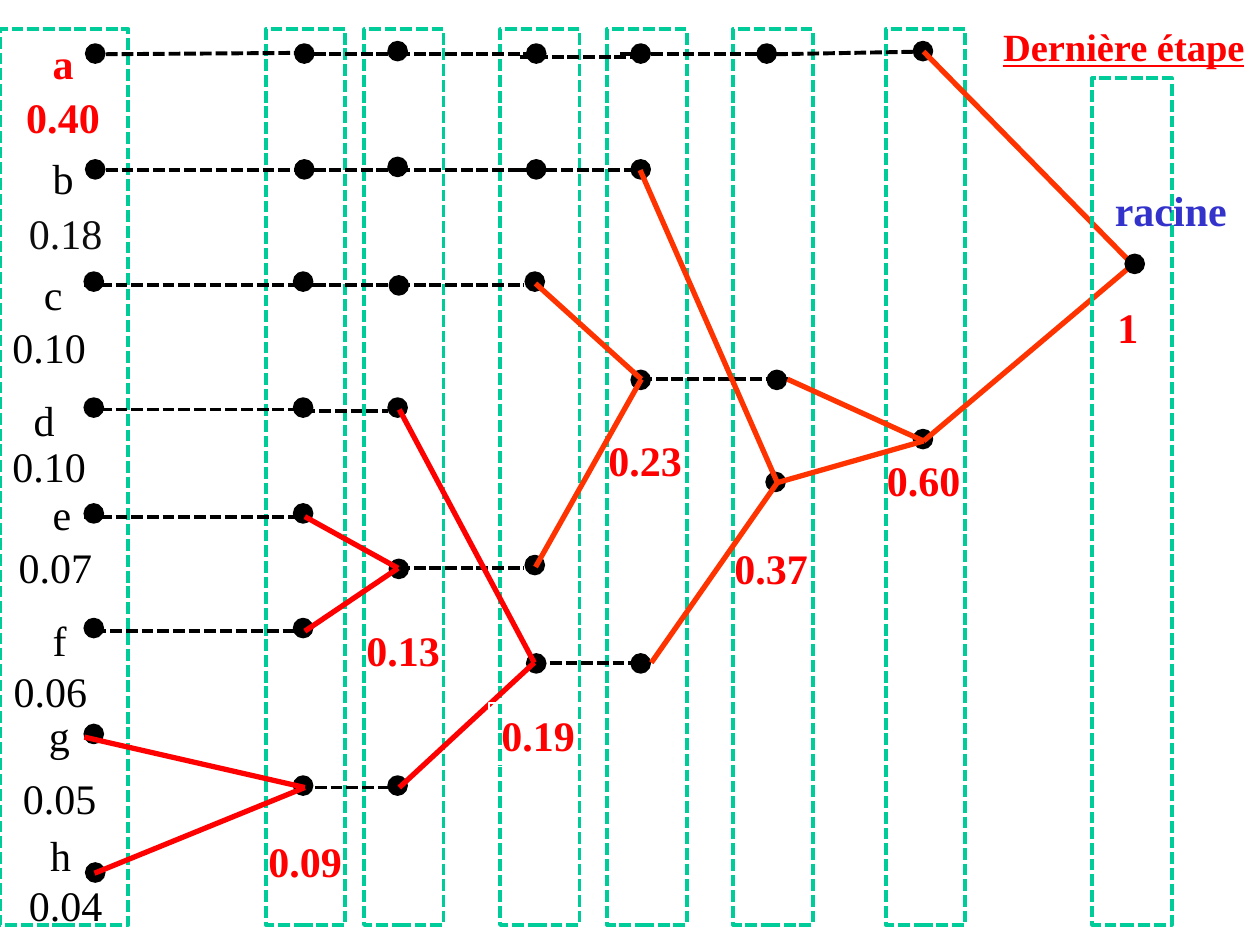
import dataclasses

import pptx
import pptx.dml.color
import pptx.enum.dml
import pptx.enum.shapes
import pptx.enum.text
import pptx.oxml
import pptx.util

Pt = pptx.util.Pt
MSO_SHAPE = pptx.enum.shapes.MSO_SHAPE
DASH = pptx.enum.dml.MSO_LINE.SQUARE_DOT


@dataclasses.dataclass(frozen=True)
class Theme:
    font: str = "Times New Roman"
    title_size: float = 22
    text_size: float = 24
    black: str = "000000"
    soft_black: str = "0D0D0D"
    red: str = "FF0000"
    orange: str = "FF3300"
    green: str = "00CC99"
    blue: str = "3333CC"
    white: str = "FFFFFF"


@dataclasses.dataclass(frozen=True)
class Box:
    left: float
    top: float
    width: float
    height: float

    def inner(self, left, top, width, height):
        """Return a box whose corner is measured from this one."""
        return Box(self.left + left, self.top + top, width, height)

    def lengths(self):
        return [Pt(value) for value in dataclasses.astuple(self)]


THEME = Theme()
PAGE = Box(0, 0, 720, 540)
STEP_TOP, STEP_WIDTH, STEP_HEIGHT = 16.6, 45.4, 512
LEAF_STEP = Box(0, STEP_TOP, 73.4, STEP_HEIGHT)
ROOT_STEP = Box(624.2, 44.6, STEP_WIDTH, 483.8)
DOT = 10.8
LABEL_HEIGHT, WEIGHT_WIDTH = 36.4, 56.6

# Dot centres, measured from the corner of their step
LEAF_DOTS = [(54.4, 14), (54.4, 80.2), (53.6, 144.3), (53.6, 216.3),
             (53.6, 276.8), (53.6, 342.3), (53.6, 402.8), (54.4, 482)]
ROOT_DOTS = [(24.2, 106.2)]
MIDDLE_STEPS = {  # left edge of the step: its dots
    151.9: [(22, 14), (22, 80.2), (21.3, 144.3), (21.3, 216.3),
            (21.3, 276.8), (21.3, 342.3), (21.3, 432.3)],
    208.1: [(19.1, 12.6), (19.1, 78.8), (19.8, 146.5), (19.1, 216.3),
            (19.8, 308.5), (19.1, 432.3)],
    285.8: [(20.6, 14), (20.6, 80.2), (19.8, 144.3), (19.8, 306.3), (20.6, 362.5)],
    347: [(19.1, 14), (19.1, 80.2), (19.1, 200.5), (19.1, 362.5)],
    419: [(19.1, 14), (24.9, 200.5), (24.2, 258.8)],
    506.2: [(21.2, 12.6), (21.2, 234.3)],
}

# Symbol, its left, top and width; probability, its left and top
LEAVES = [
    ("a", 23, 18, 26.6, "0.40", 7.9, 49),
    ("b", 23, 83.5, 26.6, "0.18", 9.4, 115.2),
    ("c", 18, 149.8, 25.2, "0.10", 0, 180),
    ("d", 12.2, 221.8, 26.6, "0.10", 0, 248.4),
    ("e", 23, 275.8, 25.2, "0.07", 3.6, 306),
    ("f", 23, 347.8, 22.3, "0.06", 0.7, 376.6),
    ("g", 20.9, 401.8, 26.6, "0.05", 6, 437.8),
    ("h", 21.6, 470.2, 26.6, "0.04", 9.4, 499),
]

# Waiting nodes carried forward: height, then start and end of each link
LEVEL_LINKS = [
    (31, [(179.3, 227.5), (227.5, 308.2), (354.2, 444.2)]),
    (32.4, [(297.4, 363.6)]),
    (97.2, [(60.5, 179.3), (179.3, 227.5), (227.5, 308.2), (293.8, 365.8)]),
    (162.7, [(48.2, 179.3), (179.3, 227.5), (227.5, 299.5)]),
    (216.7, [(365.8, 450)]),
    (234, [(48.2, 174.2)]),
    (234.7, [(173.5, 221.8)]),
    (295.2, [(48.2, 174.2)]),
    (324.7, [(227.5, 299.5)]),
    (360.7, [(54, 174.2)]),
    (378.7, [(305.3, 365.8)]),
    (450, [(180, 228.2)]),
]
SLANTED_LINKS = [((60.5, 31), (174.2, 30.2)), ((443.5, 31), (527.8, 29.5))]

# Two children and the parent that joins them
MERGES = [
    ((48.2, 421.2), (54, 499), (174.2, 450), THEME.red),
    ((174.2, 295.2), (174.2, 360.7), (227.5, 324.7), THEME.red),
    ((228.2, 234), (228.2, 450), (305.3, 378.7), THEME.red),
    ((306, 162), (306, 324), (366.5, 216.7), THEME.orange),
    ((365.8, 97.2), (372.2, 378.7), (444.2, 275.8), THEME.orange),
    ((450, 216.7), (444.2, 275.8), (527.8, 252), THEME.orange),
    ((527.8, 29.5), (527.8, 252), (647.3, 151.2), THEME.orange),
]
WEIGHTS = [("0.09", 146.2, 473.8), ("0.13", 202.3, 353.5), ("0.19", 279.4, 401.8),
           ("0.23", 340.6, 244.8), ("0.37", 412.6, 306.7), ("0.60", 499.7, 256.3)]


def color(value):
    return pptx.dml.color.RGBColor.from_string(value)


def style_line(line, value, width, dashed=False):
    line.color.rgb = color(value)
    line.width = Pt(width)
    if dashed:
        line.dash_style = DASH


def write_text(shape, text, value, size, bold=False, underline=False):
    frame = shape.text_frame
    frame.text = text
    frame.word_wrap = False
    frame.auto_size = pptx.enum.text.MSO_AUTO_SIZE.SHAPE_TO_FIT_TEXT
    frame.vertical_anchor = pptx.enum.text.MSO_ANCHOR.TOP
    para = frame.paragraphs[0]
    para.alignment = pptx.enum.text.PP_ALIGN.LEFT
    font = para.runs[0].font
    font.name, font.size = THEME.font, Pt(size)
    font.bold, font.underline = bold, underline
    font.color.rgb = color(value)


def add_label(page, box, text, value, bold=False):
    label = page.shapes.add_textbox(*box.lengths())
    write_text(label, text, value, THEME.text_size, bold)
    return label


def add_line(page, box, start, end, value, width, dashed=False):
    ends = [Pt(box.left + start[0]), Pt(box.top + start[1]),
            Pt(box.left + end[0]), Pt(box.top + end[1])]
    line = page.shapes.add_connector(pptx.enum.shapes.MSO_CONNECTOR.STRAIGHT, *ends)
    style_line(line.line, value, width, dashed)
    properties = line._element.spPr
    properties.append(pptx.oxml.parse_xml(
        '<a:effectLst xmlns:a="http://schemas.openxmlformats.org/drawingml/2006/main"/>'))


def draw_title(page, box):
    title = page.shapes.title
    title.left, title.top, title.width, title.height = box.lengths()
    write_text(title, "Dernière étape", THEME.red, THEME.title_size, True, True)


def draw_step(page, box, dots):
    """Draw the nodes alive at one step and the dashed band around them."""
    for x, y in dots:
        place = box.inner(x - DOT / 2, y - DOT / 2, DOT, DOT)
        dot = page.shapes.add_shape(MSO_SHAPE.OVAL, *place.lengths())
        dot.shadow.inherit = False
        dot.fill.solid()
        dot.fill.fore_color.rgb = color(THEME.black)
        style_line(dot.line, THEME.black, 1)
    band = page.shapes.add_shape(MSO_SHAPE.RECTANGLE, *box.lengths())
    band.shadow.inherit = False
    band.fill.background()
    style_line(band.line, THEME.green, 2.25, dashed=True)


def draw_leaf_labels(page, box):
    for symbol, left, top, width, chance, chance_left, chance_top in LEAVES:
        bold = symbol == "a"
        value = THEME.red if bold else THEME.black
        chance_value = THEME.soft_black if symbol == "b" else value
        add_label(page, box.inner(left, top, width, LABEL_HEIGHT), symbol, value, bold)
        add_label(page, box.inner(chance_left, chance_top, WEIGHT_WIDTH, LABEL_HEIGHT),
                  chance, chance_value, bold)


def draw_tree_lines(page, box):
    links = [((start, y), (end, y)) for y, spans in LEVEL_LINKS for start, end in spans]
    for start, end in links + SLANTED_LINKS:
        add_line(page, box, start, end, THEME.black, 2.25, dashed=True)
    for first, second, parent, value in MERGES:
        for child in (first, second):
            add_line(page, box, child, parent, value, 3)


def draw_weights(page, box):
    for text, left, top in WEIGHTS:
        label = add_label(page, box.inner(left, top, WEIGHT_WIDTH, LABEL_HEIGHT),
                          text, THEME.red, bold=True)
        if text == "0.19":
            style_line(label.line, THEME.white, 0.75)


def draw_root_labels(page, box):
    add_label(page, box.inner(7.2, 123.9, 26.6, LABEL_HEIGHT), "1", THEME.red, bold=True)
    add_label(page, box.inner(5.8, 57.6, 79.2, LABEL_HEIGHT), "racine", THEME.blue, bold=True)


def main():
    deck = pptx.Presentation()
    deck.slide_width, deck.slide_height = Pt(PAGE.width), Pt(PAGE.height)
    page = deck.slides.add_slide(deck.slide_layouts[5])
    draw_title(page, PAGE.inner(566, 9.4, 154, 33.8))
    draw_leaf_labels(page, PAGE)
    draw_step(page, LEAF_STEP, LEAF_DOTS)
    for left, dots in MIDDLE_STEPS.items():
        draw_step(page, Box(left, STEP_TOP, STEP_WIDTH, STEP_HEIGHT), dots)
    draw_tree_lines(page, PAGE)
    draw_weights(page, PAGE)
    draw_step(page, ROOT_STEP, ROOT_DOTS)
    draw_root_labels(page, ROOT_STEP)
    deck.save("out.pptx")


if __name__ == "__main__":
    main()
